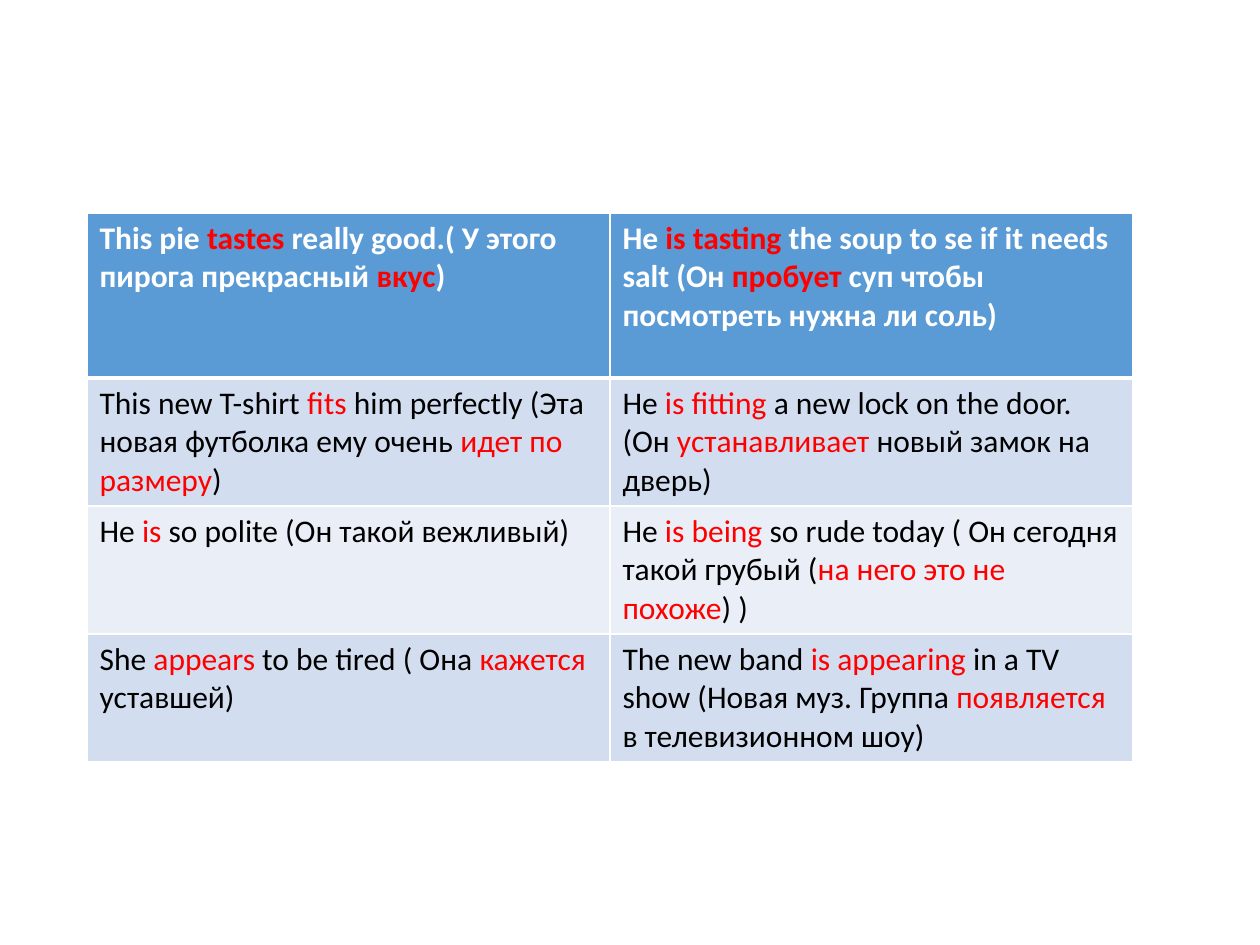
from dataclasses import dataclass

from lxml import etree
from pptx import Presentation
from pptx import util as u
from pptx.dml.color import RGBColor
from pptx.oxml.ns import qn

PX = 914400 // 126
COLORS = {
    "header": "5B9BD5",
    "odd": "D2DEEF",
    "even": "EAEFF7",
    "white": "FFFFFF",
    "black": "000000",
    "accent": "FF0000",
}
LEFT, TOP, COLUMN_WIDTH = 87, 213, 523


@dataclass
class Row:
    """Two examples; the words between asterisks are highlighted."""
    height: int
    fill: str
    simple: str
    continuous: str
    header: bool = False


ROWS = [
    Row(165, "header",
        "This pie *tastes *really good.( У этого пирога прекрасный* вкус*)",
        "He *is tasting *the soup to se if it needs salt (Он *пробует* суп чтобы "
        "посмотреть нужна ли соль)", header=True),
    Row(117, "odd",
        "This new T-shirt *fits *him perfectly (Эта новая футболка ему очень "
        "*идет по размеру*)",
        "He *is fitting *a new lock on the door. (Он *устанавливает *новый замок на дверь)"),
    Row(82, "even",
        "He *is* so polite (Он такой вежливый)",
        "He *is being *so rude today ( Он сегодня такой грубый (*на него это не похоже*) )"),
    Row(117, "odd",
        "She *appears* to be tired ( Она *кажется *уставшей)",
        "The new band *is appearing *in a TV show (Новая муз. Группа *появляется* "
        "в телевизионном шоу)"),
]


def px(length: int) -> int:
    return length * PX


def color(name: str) -> RGBColor:
    return RGBColor.from_string(COLORS[name])


def add_borders(cell, top: int, bottom: int) -> None:
    properties = cell._tc.get_or_add_tcPr()
    for side, points in (("lnL", 1), ("lnR", 1), ("lnT", top), ("lnB", bottom)):
        line = etree.SubElement(properties, qn(f"a:{side}"), w=str(u.Pt(points)))
        fill = etree.SubElement(line, qn("a:solidFill"))
        etree.SubElement(fill, qn("a:srgbClr"), val=COLORS["white"])


def write_example(cell, example: str, header: bool) -> None:
    paragraph = cell.text_frame.paragraphs[0]
    for index, part in enumerate(example.split("*")):
        run = paragraph.add_run()
        run.text = part
        run.font.name = "Calibri"
        run.font.size = u.Pt(18)
        run.font.bold = header
        plain = "white" if header else "black"
        run.font.color.rgb = color("accent" if index % 2 else plain)


def add_examples(slide, rows: list[Row]) -> None:
    table = slide.shapes.add_table(
        len(rows), 2, px(LEFT), px(TOP), px(2 * COLUMN_WIDTH),
        px(sum(row.height for row in rows))).table
    for column in table.columns:
        column.width = px(COLUMN_WIDTH)
    for index, row in enumerate(rows):
        table.rows[index].height = px(row.height)
        for column_index, example in enumerate((row.simple, row.continuous)):
            cell = table.cell(index, column_index)
            # The rule under the header is thicker than the others
            add_borders(cell, top=3 if index == 1 else 1, bottom=3 if row.header else 1)
            cell.fill.solid()
            cell.fill.fore_color.rgb = color(row.fill)
            write_example(cell, example, row.header)


def main() -> None:
    presentation = Presentation()
    presentation.slide_width = u.Inches(10)
    presentation.slide_height = u.Inches(7.5)
    slide = presentation.slides.add_slide(presentation.slide_layouts[6])
    add_examples(slide, ROWS)
    presentation.save("out.pptx")


if __name__ == "__main__":
    main()
